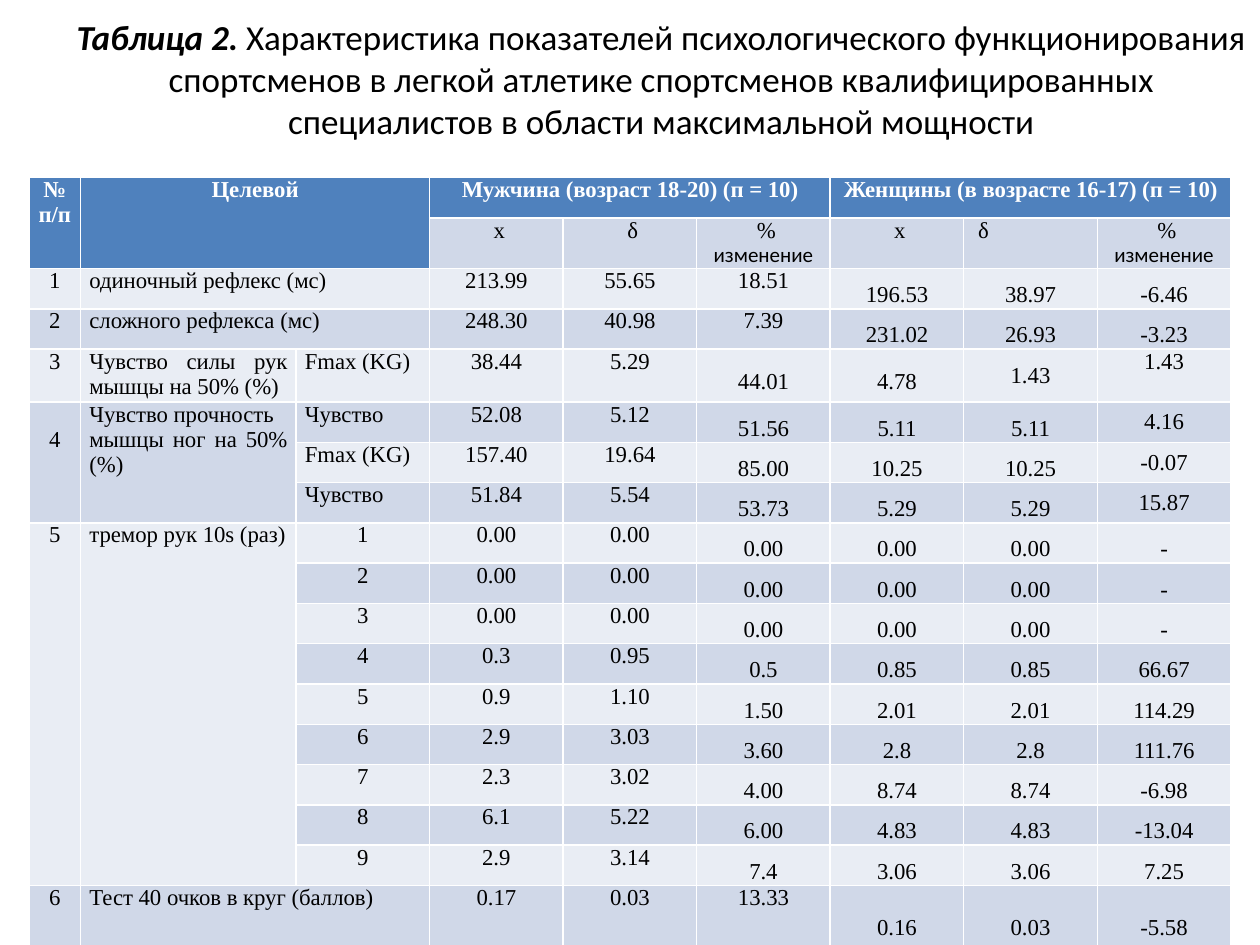
from pptx import Presentation
from pptx.dml.color import RGBColor
from pptx.enum.text import MSO_ANCHOR, MSO_AUTO_SIZE, PP_ALIGN
from pptx.util import Inches, Pt

HEADER, DARK, LIGHT = "4F81BD", "D0D8E8", "E9EDF4"
CHANGE = " % |изменение"
ROWS = [
    ["№ п/п", "Целевой", "", "Мужчина (возраст 18-20) (п = 10)", "", "",
     "Женщины (в возрасте 16-17) (п = 10)", "", ""],
    ["", "", "", " x", " δ", CHANGE, " x", " δ", CHANGE],
    ["1", "одиночный рефлекс (мс)", "", "213.99", "55.65", "18.51", "196.53", "38.97", "-6.46"],
    ["2", "сложного рефлекса (мс)", "", "248.30", "40.98", "7.39", "231.02", "26.93", "-3.23"],
    ["3", "Чувство силы рук мышцы на 50% (%)", "Fmax (KG)",
     "38.44", "5.29", "44.01", "4.78", "1.43", "1.43"],
    ["4", "Чувство прочность \nмышцы ног на 50% (%)", "Чувство",
     "52.08", "5.12", "51.56", "5.11", "5.11", "4.16"],
    ["", "", "Fmax (KG)", "157.40", "19.64", "85.00", "10.25", "10.25", "-0.07"],
    ["", "", "Чувство", "51.84", "5.54", "53.73", "5.29", "5.29", "15.87"],
    ["5", "тремор рук 10s (раз)", "1", "0.00", "0.00", "0.00", "0.00", "0.00", "-"],
    ["", "", "2", "0.00", "0.00", "0.00", "0.00", "0.00", "-"],
    ["", "", "3", "0.00", "0.00", "0.00", "0.00", "0.00", "-"],
    ["", "", "4", "0.3", "0.95", "0.5", "0.85", "0.85", "66.67"],
    ["", "", "5", "0.9", "1.10", "1.50", "2.01", "2.01", "114.29"],
    ["", "", "6", "2.9", "3.03", "3.60", "2.8", "2.8", "111.76"],
    ["", "", "7", "2.3", "3.02", "4.00", "8.74", "8.74", "-6.98"],
    ["", "", "8", "6.1", "5.22", "6.00", "4.83", "4.83", "-13.04"],
    ["", "", "9", "2.9", "3.14", "7.4", "3.06", "3.06", "7.25"],
    ["6", "Тест 40 очков в круг (баллов)", "", "0.17", "0.03", "13.33", "0.16", "0.03", "-5.58"],
]
MERGES = [(0, 0, 1, 0), (0, 1, 1, 2), (0, 3, 0, 5), (0, 6, 0, 8),
          (2, 1, 2, 2), (3, 1, 3, 2), (17, 1, 17, 2),
          (5, 0, 7, 0), (5, 1, 7, 1), (8, 0, 16, 0), (8, 1, 16, 1)]
TOP_CELLS = {(2, 5), (3, 5), (17, 5), (4, 8)}
SINGLE_SPACED = {(4, 7), (5, 8), (6, 8), (7, 8)}
COL_WIDTHS = [0.41, 1.71] + [1.06] * 7
ROW_HEIGHTS = [0.32] * 4 + [0.42] + [0.32] * 12 + [0.58]


def rgb(value):
    return RGBColor.from_string(value)


def style_font(font, name, size, color="000000", bold=False):
    font.name, font.size, font.bold = name, Pt(size), bold
    font.color.rgb = rgb(color)


def add_title(slide, left, top, width, height):
    sp = slide.shapes.title
    sp.left, sp.top, sp.width, sp.height = left, top, width, height
    tf = sp.text_frame
    tf.word_wrap = True
    tf.auto_size = MSO_AUTO_SIZE.NONE
    tf.vertical_anchor = MSO_ANCHOR.MIDDLE
    tf.margin_bottom = Inches(0.35)
    p = tf.paragraphs[0]
    p.alignment = PP_ALIGN.CENTER
    style_font(p.font, "Calibri", 20)
    r = p.add_run()
    r.text = "Таблица 2."
    r.font.bold = r.font.italic = True
    p.add_run().text = (" Характеристика показателей психологического функционирования "
                        "спортсменов в легкой атлетике спортсменов квалифицированных "
                        "специалистов в области максимальной мощности")


def fill_cell(cell, row, col, text):
    cell.fill.solid()
    cell.fill.fore_color.rgb = rgb(HEADER if row == 0 else DARK if row % 2 else LIGHT)
    cell.margin_left = cell.margin_right = Inches(0.07)
    cell.margin_top = cell.margin_bottom = 0
    middle = row > 1 and col > 4 and (row, col) not in TOP_CELLS
    cell.vertical_anchor = MSO_ANCHOR.MIDDLE if middle else MSO_ANCHOR.TOP
    label = row > 1 and col in (1, 2) and not text.isdigit()
    justified = label or (row, col) == (1, 7)
    tf = cell.text_frame
    for i, line in enumerate(text.split("\n")):
        p = tf.add_paragraph() if i else tf.paragraphs[0]
        p.alignment = PP_ALIGN.JUSTIFY if justified else PP_ALIGN.CENTER
        if middle and (row, col) not in SINGLE_SPACED:
            p.line_spacing = 1.5
        style_font(p.font, "Times New Roman", 13, "000000" if row else "FFFFFF", row == 0)
        value, _, caption = line.partition("|")
        for part, name, size in ((value, "Times New Roman", 13), (caption, "Calibri", 12)):
            if part:
                r = p.add_run()
                r.text = part
                style_font(r.font, name, size, "000000" if row else "FFFFFF", row == 0)


def add_results_table(slide, left, top, width, height):
    table = slide.shapes.add_table(len(ROWS), len(COL_WIDTHS), left, top, width, height).table
    for column, w in zip(table.columns, COL_WIDTHS):
        column.width = Inches(w)
    for row, h in zip(table.rows, ROW_HEIGHTS):
        row.height = Inches(h)
    for r1, c1, r2, c2 in MERGES:
        table.cell(r1, c1).merge(table.cell(r2, c2))
    for i, texts in enumerate(ROWS):
        for j, text in enumerate(texts):
            cell = table.cell(i, j)
            if not cell.is_spanned:
                fill_cell(cell, i, j, text)
    table.cell(5, 0).margin_top = Inches(0.2)


def main():
    prs = Presentation()
    prs.slide_width, prs.slide_height = Inches(10), Inches(7.5)
    slide = prs.slides.add_slide(prs.slide_layouts[5])
    add_title(slide, Inches(0.5), Inches(0.13), Inches(9.5), Inches(1.28))
    add_results_table(slide, Inches(0.23), Inches(1.41),
                      Inches(sum(COL_WIDTHS)), Inches(sum(ROW_HEIGHTS)))
    prs.save("out.pptx")


if __name__ == "__main__":
    main()
